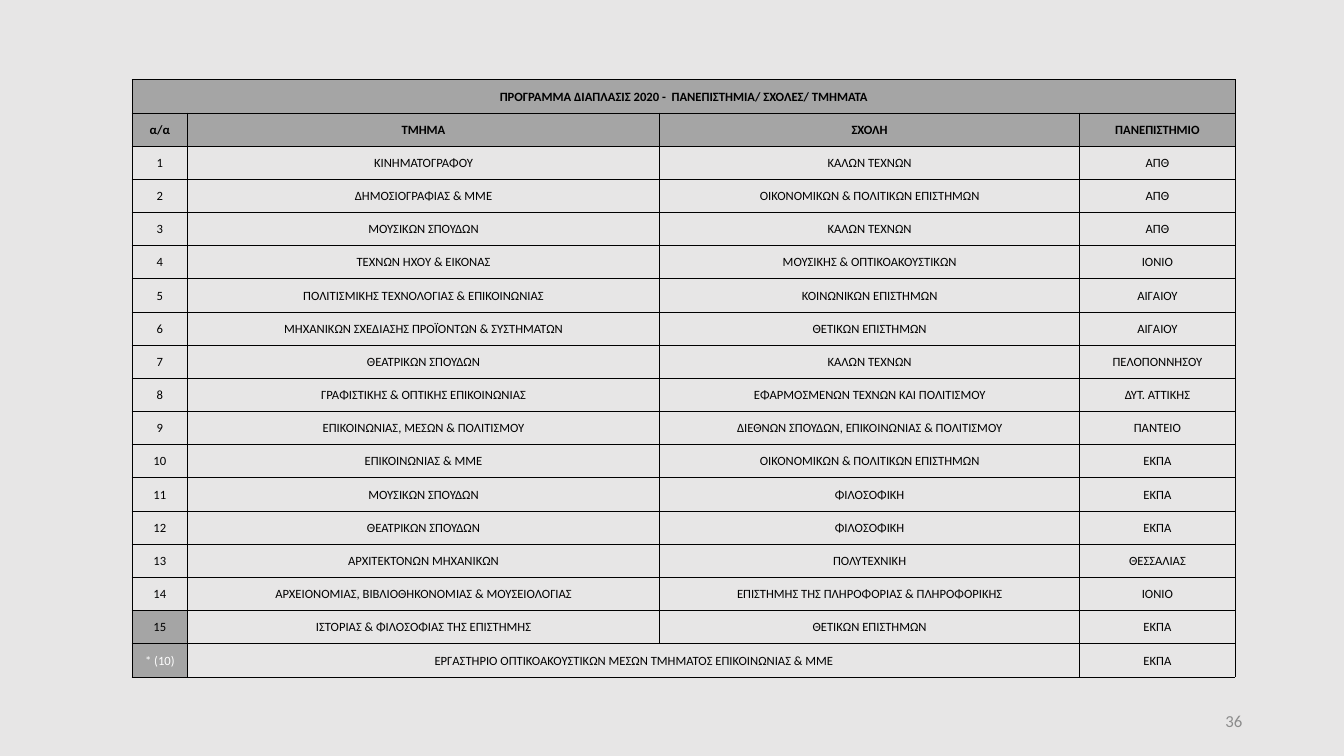
from lxml import etree
from pptx import Presentation
from pptx import util as u
from pptx.dml.color import RGBColor
from pptx.enum import text
from pptx.oxml import ns

COLORS = {"background": "E7E6E6", "header": "A5A5A5", "ink": "000000",
          "light": "FFFFFF", "number": "8C8C8C"}
FONT = "Calibri"
COLUMN_WIDTHS = [0.55, 4.68, 4.17, 1.54]
HEADER_ROWS = 2

TITLE = "ΠΡΟΓΡΑΜΜΑ ΔΙΑΠΛΑΣΙΣ 2020 -  ΠΑΝΕΠΙΣΤΗΜΙΑ/ ΣΧΟΛΕΣ/ ΤΜΗΜΑΤΑ"
HEADINGS = ["α/α", "ΤΜΗΜΑ", "ΣΧΟΛΗ", "ΠΑΝΕΠΙΣΤΗΜΙΟ"]
DEPARTMENTS = [
    ("ΚΙΝΗΜΑΤΟΓΡΑΦΟΥ", "ΚΑΛΩΝ ΤΕΧΝΩΝ", "ΑΠΘ"),
    ("ΔΗΜΟΣΙΟΓΡΑΦΙΑΣ & ΜΜΕ", "ΟΙΚΟΝΟΜΙΚΩΝ & ΠΟΛΙΤΙΚΩΝ ΕΠΙΣΤΗΜΩΝ", "ΑΠΘ"),
    ("ΜΟΥΣΙΚΩΝ ΣΠΟΥΔΩΝ", "ΚΑΛΩΝ ΤΕΧΝΩΝ", "ΑΠΘ"),
    ("ΤΕΧΝΩΝ ΗΧΟΥ & ΕΙΚΟΝΑΣ", "ΜΟΥΣΙΚΗΣ & ΟΠΤΙΚΟΑΚΟΥΣΤΙΚΩΝ", "ΙΟΝΙΟ"),
    ("ΠΟΛΙΤΙΣΜΙΚΗΣ ΤΕΧΝΟΛΟΓΙΑΣ & ΕΠΙΚΟΙΝΩΝΙΑΣ", "ΚΟΙΝΩΝΙΚΩΝ ΕΠΙΣΤΗΜΩΝ", "ΑΙΓΑΙΟΥ"),
    ("ΜΗΧΑΝΙΚΩΝ ΣΧΕΔΙΑΣΗΣ ΠΡΟΪΟΝΤΩΝ & ΣΥΣΤΗΜΑΤΩΝ", "ΘΕΤΙΚΩΝ ΕΠΙΣΤΗΜΩΝ", "ΑΙΓΑΙΟΥ"),
    ("ΘΕΑΤΡΙΚΩΝ ΣΠΟΥΔΩΝ", "ΚΑΛΩΝ ΤΕΧΝΩΝ", "ΠΕΛΟΠΟΝΝΗΣΟΥ"),
    ("ΓΡΑΦΙΣΤΙΚΗΣ & ΟΠΤΙΚΗΣ ΕΠΙΚΟΙΝΩΝΙΑΣ", "ΕΦΑΡΜΟΣΜΕΝΩΝ ΤΕΧΝΩΝ ΚΑΙ ΠΟΛΙΤΙΣΜΟΥ",
     "ΔΥΤ. ΑΤΤΙΚΗΣ"),
    ("ΕΠΙΚΟΙΝΩΝΙΑΣ, ΜΕΣΩΝ & ΠΟΛΙΤΙΣΜΟΥ",
     "ΔΙΕΘΝΩΝ ΣΠΟΥΔΩΝ, ΕΠΙΚΟΙΝΩΝΙΑΣ & ΠΟΛΙΤΙΣΜΟΥ", "ΠΑΝΤΕΙΟ"),
    ("ΕΠΙΚΟΙΝΩΝΙΑΣ & ΜΜΕ", "ΟΙΚΟΝΟΜΙΚΩΝ & ΠΟΛΙΤΙΚΩΝ ΕΠΙΣΤΗΜΩΝ", "ΕΚΠΑ"),
    ("ΜΟΥΣΙΚΩΝ ΣΠΟΥΔΩΝ", "ΦΙΛΟΣΟΦΙΚΗ", "ΕΚΠΑ"),
    ("ΘΕΑΤΡΙΚΩΝ ΣΠΟΥΔΩΝ", "ΦΙΛΟΣΟΦΙΚΗ", "ΕΚΠΑ"),
    ("ΑΡΧΙΤΕΚΤΟΝΩΝ ΜΗΧΑΝΙΚΩΝ", "ΠΟΛΥΤΕΧΝΙΚΗ", "ΘΕΣΣΑΛΙΑΣ"),
    ("ΑΡΧΕΙΟΝΟΜΙΑΣ, ΒΙΒΛΙΟΘΗΚΟΝΟΜΙΑΣ & ΜΟΥΣΕΙΟΛΟΓΙΑΣ",
     "ΕΠΙΣΤΗΜΗΣ ΤΗΣ ΠΛΗΡΟΦΟΡΙΑΣ & ΠΛΗΡΟΦΟΡΙΚΗΣ", "ΙΟΝΙΟ"),
    ("ΙΣΤΟΡΙΑΣ & ΦΙΛΟΣΟΦΙΑΣ ΤΗΣ ΕΠΙΣΤΗΜΗΣ", "ΘΕΤΙΚΩΝ ΕΠΙΣΤΗΜΩΝ", "ΕΚΠΑ"),
]
LABORATORY = ["* (10)", "ΕΡΓΑΣΤΗΡΙΟ ΟΠΤΙΚΟΑΚΟΥΣΤΙΚΩΝ ΜΕΣΩΝ ΤΜΗΜΑΤΟΣ ΕΠΙΚΟΙΝΩΝΙΑΣ & ΜΜΕ",
              "", "ΕΚΠΑ"]


def rgb(name):
    return RGBColor.from_string(COLORS[name])


def write(frame, words, size, color, alignment, bold=False):
    paragraph = frame.paragraphs[0]
    paragraph.alignment = alignment
    run = paragraph.add_run()
    run.text = words
    for key, value in {"name": FONT, "size": u.Pt(size), "bold": bold}.items():
        setattr(run.font, key, value)
    run.font.color.rgb = rgb(color)


def add_borders(cell, points=0.5):
    properties = cell._tc.get_or_add_tcPr()
    for position, side in enumerate(("lnL", "lnR", "lnT", "lnB")):
        line = etree.Element(ns.qn(f"a:{side}"), w=str(u.Pt(points)))
        fill = etree.SubElement(line, ns.qn("a:solidFill"))
        etree.SubElement(fill, ns.qn("a:srgbClr"), val=COLORS["ink"])
        properties.insert(position, line)


def format_cell(cell, words, shaded, color, bold):
    layout = {"margin_left": u.Inches(0.01), "margin_right": u.Inches(0.01),
              "margin_top": u.Inches(0.01), "margin_bottom": 0,
              "vertical_anchor": text.MSO_ANCHOR.MIDDLE}
    for key, value in layout.items():
        setattr(cell, key, value)
    if shaded:
        cell.fill.solid()
        cell.fill.fore_color.rgb = rgb("header")
    else:
        cell.fill.background()
    add_borders(cell)
    if not cell.is_spanned:
        write(cell.text_frame, words, 9, color, text.PP_ALIGN.CENTER, bold)


def add_department_table(slide, left, top, width, height):
    numbered = [[str(number), *entry] for number, entry in enumerate(DEPARTMENTS, 1)]
    rows = [[TITLE, "", "", ""], HEADINGS, *numbered, LABORATORY]
    last = len(rows) - 1
    table = slide.shapes.add_table(len(rows), len(HEADINGS), left, top, width, height).table
    table.first_row = table.horz_banding = False
    for column, share in zip(table.columns, COLUMN_WIDTHS):
        column.width = int(width * share / sum(COLUMN_WIDTHS))
    for row in table.rows:
        row.height = int(height / len(rows))
    table.cell(0, 0).merge(table.cell(0, 3))
    table.cell(last, 1).merge(table.cell(last, 2))
    for r, row in enumerate(rows):
        for c, words in enumerate(row):
            heading = r < HEADER_ROWS
            shaded = heading or (c == 0 and r >= last - 1)
            color = "light" if (r, c) == (last, 0) else "ink"
            format_cell(table.cell(r, c), words, shaded, color, heading)


def add_slide_number(slide, left, top, width, height):
    frame = slide.shapes.add_textbox(left, top, width, height).text_frame
    frame.word_wrap = True
    frame.vertical_anchor = text.MSO_ANCHOR.MIDDLE
    write(frame, "36", 12, "number", text.PP_ALIGN.RIGHT)


def main():
    presentation = Presentation()
    presentation.slide_width = u.Inches(13.33)
    presentation.slide_height = u.Inches(7.5)
    slide = presentation.slides.add_slide(presentation.slide_layouts[6])
    slide.background.fill.solid()
    slide.background.fill.fore_color.rgb = rgb("background")
    add_department_table(slide, *map(u.Inches, (1.31, 0.79, 10.94, 5.93)))
    add_slide_number(slide, *map(u.Inches, (9.42, 6.95, 3, 0.4)))
    presentation.save("out.pptx")


if __name__ == "__main__":
    main()
